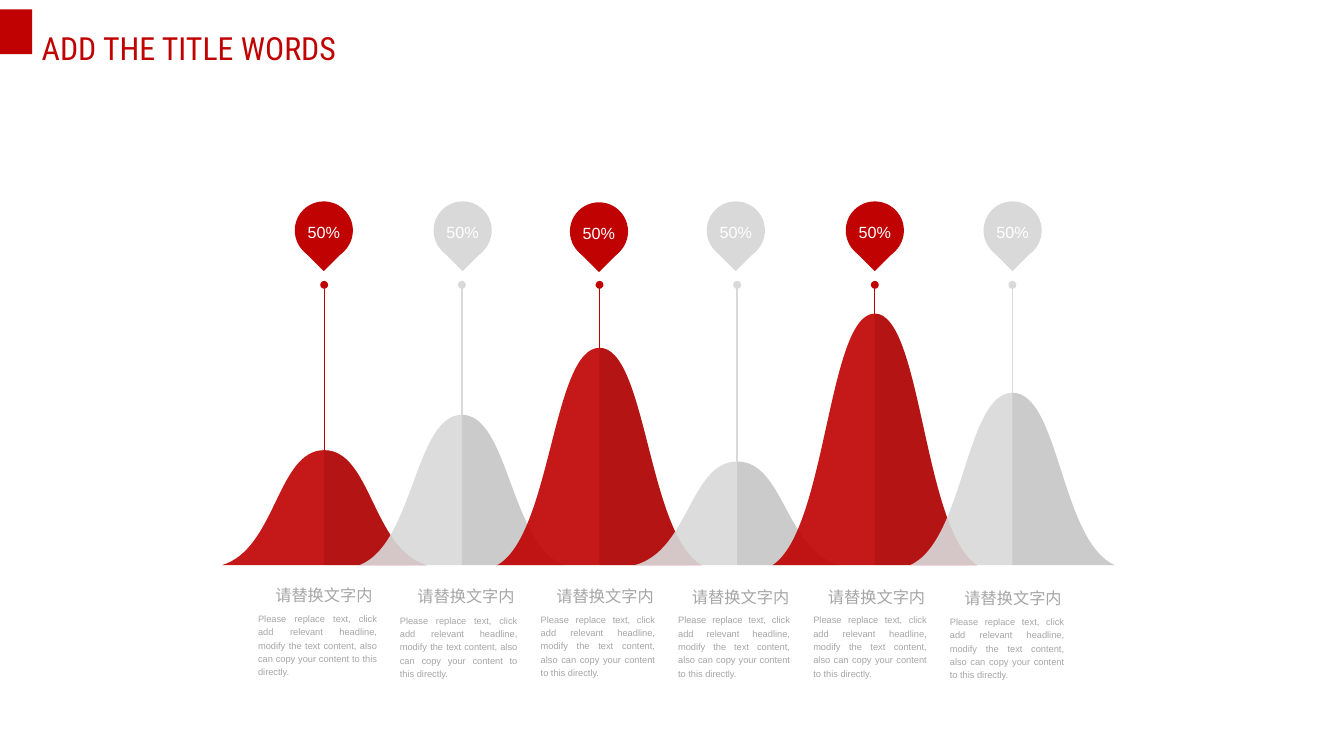
from collections import namedtuple

from lxml import etree
from pptx import Presentation
from pptx.dml.color import RGBColor
from pptx.enum.shapes import MSO_CONNECTOR, MSO_SHAPE
from pptx.enum.text import MSO_ANCHOR, MSO_AUTO_SIZE, PP_ALIGN
from pptx.oxml.ns import qn
from pptx.util import Pt

RECT, OVAL = MSO_SHAPE.RECTANGLE, MSO_SHAPE.OVAL
STRAIGHT = MSO_CONNECTOR.STRAIGHT
MIDDLE = MSO_ANCHOR.MIDDLE
CENTER, JUSTIFY, LEFT = PP_ALIGN.CENTER, PP_ALIGN.JUSTIFY, PP_ALIGN.LEFT
GROW = MSO_AUTO_SIZE.SHAPE_TO_FIT_TEXT

RED = RGBColor(0xC0, 0x02, 0x02)
DARK_RED = RGBColor(0x60, 0x01, 0x01)
SILVER = RGBColor(0xD9, 0xD9, 0xD9)
DARK_GREY = RGBColor(0x6C, 0x6C, 0x6C)
GREY = RGBColor(0xA6, 0xA6, 0xA6)
WHITE = RGBColor(0xFF, 0xFF, 0xFF)

HEADING = "请替换文字内"
BODY = ("Please replace text, click add relevant headline, modify the text "
        "content, also can copy your content to this directly.")

FIRST_AXIS, AXIS_STEP = 244.2, 103.68
BASE = 425.7
PEAK_WIDTH = 154
PIN_SIZE = 43.8
STEM_TOP = 214.6

Column = namedtuple(
    "Column", "height pin_shift pin_top heading_left heading_top body_left body_top body_width")
COLUMNS = [
    Column(86.6, -0.3, 151.7, 207.4, 438, 194.4, 460.2, 89.5),
    Column(113.2, 0.6, 151.7, 314.4, 438.7, 301.2, 461.5, 88.4),
    Column(163.7, -0.4, 152.4, 419.2, 438.9, 407.3, 460.8, 86),
    Column(78, -1, 151.7, 521.2, 439.5, 510.8, 461.2, 84.2),
    Column(189.5, 0, 151.7, 623.6, 439.5, 612.6, 461.2, 85.4),
    Column(129.8, 0.1, 151.7, 726.4, 440.3, 715.5, 462.5, 86),
]


def paint(sp, color, opacity=100):
    sp.shadow.inherit = False
    sp.line.fill.background()
    sp.fill.solid()
    sp.fill.fore_color.rgb = color
    if opacity < 100:
        clr = sp.fill._xPr.find(qn("a:solidFill"))[0]
        etree.SubElement(clr, qn("a:alpha")).set("val", str(opacity * 1000))


def add_outline(s, points, color, opacity=100, curves=0):
    points = [(Pt(x), Pt(y)) for x, y in points]
    builder = s.shapes.build_freeform(*points[0])
    builder.add_line_segments(points[1:])
    sp = builder.convert_to_shape()
    paint(sp, color, opacity)
    segments = list(sp._element.iter(qn("a:lnTo")))
    for i in range(0, 3 * curves, 3):
        curve = etree.Element(qn("a:cubicBezTo"))
        segments[i].addprevious(curve)
        for segment in segments[i:i + 3]:
            curve.append(segment[0])
            segment.getparent().remove(segment)


def write(tf, text, size, color, align, spacing, font="Arial", margin=0):
    if margin == 0:
        tf.margin_left = tf.margin_top = tf.margin_right = tf.margin_bottom = 0
    p = tf.paragraphs[0]
    p.alignment = align
    p.line_spacing = spacing
    r = p.add_run()
    r.text = text
    r.font.size = Pt(size)
    r.font.name = font
    r.font.color.rgb = color


def add_text(s, left, top, width, height, wrap, *args, **kwargs):
    tf = s.shapes.add_textbox(Pt(left), Pt(top), Pt(width), Pt(height)).text_frame
    tf.word_wrap = wrap
    tf.auto_size = GROW
    write(tf, *args, **kwargs)


def bell_side(axis, top, half, height):
    return [(axis, top), (axis + 0.46 * half, top),
            (axis + 0.47 * half, top + 0.86 * height), (axis + half, top + height)]


def draw_peak(s, left, top, width, height, color, shade):
    axis = left + width / 2
    right_side = bell_side(axis, top, width / 2, height)
    left_side = bell_side(axis, top, -width / 2, height)
    add_outline(s, left_side[::-1] + right_side[1:], color, 91, curves=2)
    add_outline(s, right_side + [(axis, top + height)], shade, 15, curves=1)


def draw_pin(s, left, top, size, color):
    axis, chord = left + size / 2, top + 0.85 * size
    sp = s.shapes.add_shape(OVAL, Pt(left), Pt(top), Pt(size), Pt(size))
    paint(sp, color)
    sp.text_frame.vertical_anchor = MIDDLE
    write(sp.text_frame, "50%", 12.2, WHITE, CENTER, 1.2)
    half = 0.35 * size
    add_outline(s, [(axis - half, chord), (axis + half, chord), (axis, chord + half)], color)


def draw_stem(s, axis, top, bottom, color):
    stem = s.shapes.add_connector(STRAIGHT, Pt(axis), Pt(top), Pt(axis), Pt(bottom))
    stem.line.color.rgb = color
    stem.line.width = Pt(1)
    etree.SubElement(stem.line._get_or_add_ln(), qn("a:headEnd")).set("type", "oval")
    etree.SubElement(stem._element.spPr, qn("a:effectLst"))


def draw_caption(s, column):
    add_text(s, column.heading_left, column.heading_top, 75, 18, False,
             HEADING, 12.2, GREY, JUSTIFY, 1.2)
    add_text(s, column.body_left, column.body_top, column.body_width, 49.7, True,
             BODY, 7, GREY, JUSTIFY, 1.2)


def draw_header(s, left, top, width, height):
    sp = s.shapes.add_shape(RECT, Pt(left), Pt(top), Pt(width), Pt(height))
    paint(sp, RED)
    add_text(s, left + width, top - 3.4, 279, 45.4, True, "ADD THE TITLE WORDS",
             24, RED, LEFT, 1.5, font="Roboto Condensed", margin=None)


def draw_column(s, index, column):
    axis = FIRST_AXIS + index * AXIS_STEP
    color, shade = ((RED, DARK_RED), (SILVER, DARK_GREY))[index % 2]
    top = BASE - column.height
    draw_peak(s, axis - PEAK_WIDTH / 2, top, PEAK_WIDTH, column.height, color, shade)
    draw_pin(s, axis - PIN_SIZE / 2 + column.pin_shift, column.pin_top, PIN_SIZE, color)
    draw_stem(s, axis, STEM_TOP, top, color)
    draw_caption(s, column)


def main():
    prs = Presentation()
    prs.slide_width, prs.slide_height = Pt(1012.3), Pt(569.5)
    s = prs.slides.add_slide(prs.slide_layouts[6])
    draw_header(s, 0, 7, 24.3, 33.8)
    for index, column in enumerate(COLUMNS):
        draw_column(s, index, column)
    prs.save("out.pptx")


if __name__ == "__main__":
    main()
